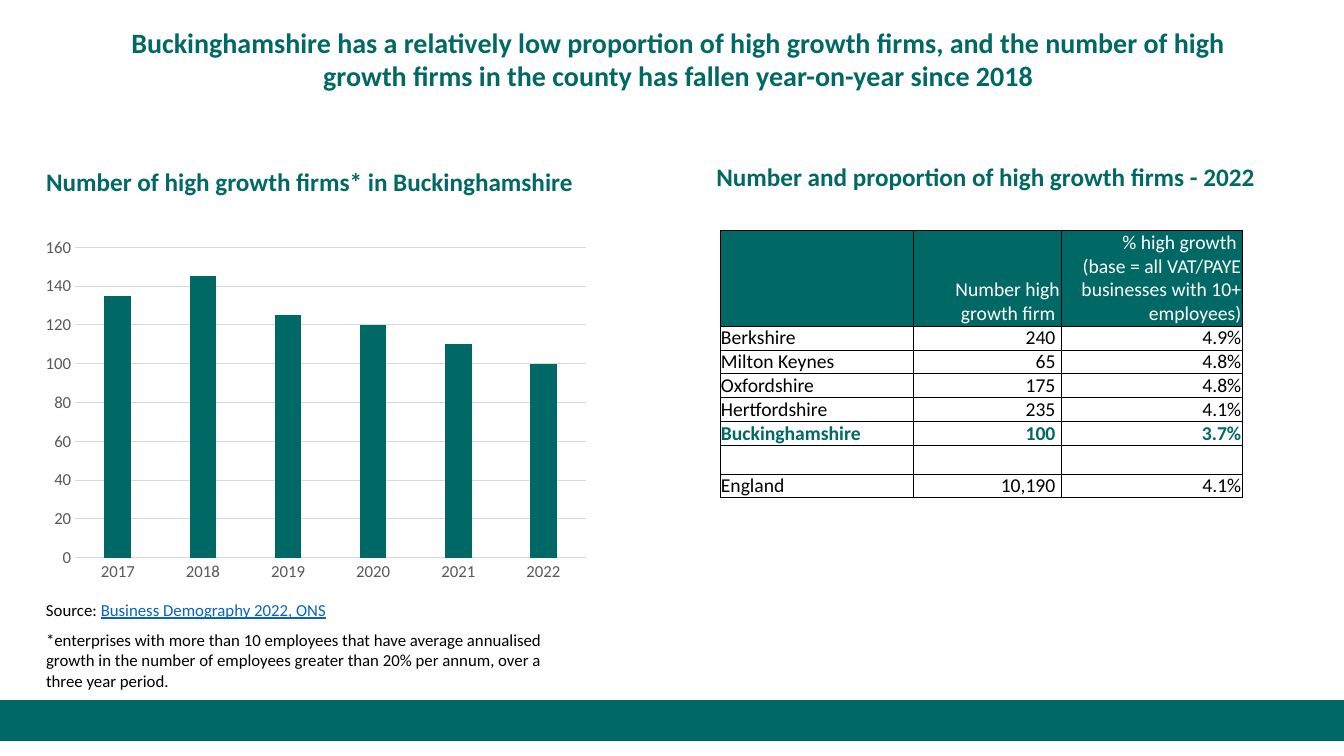
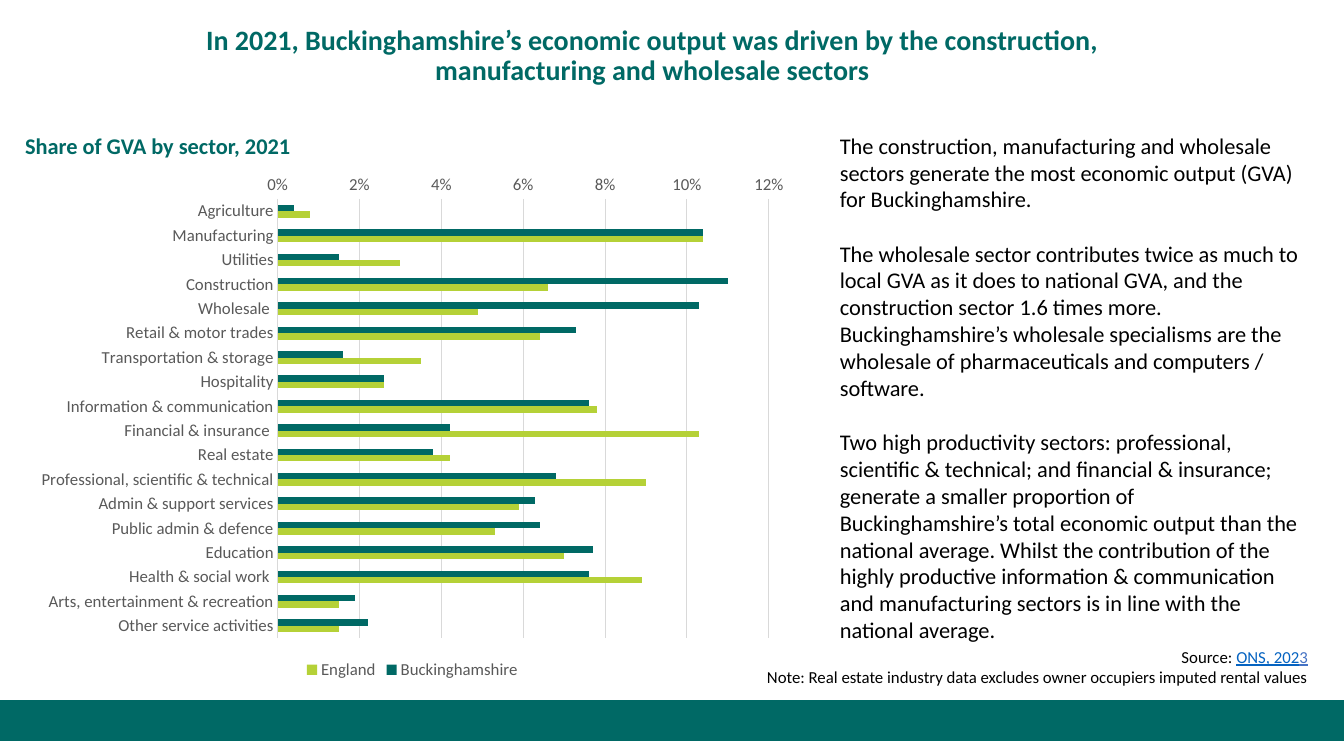
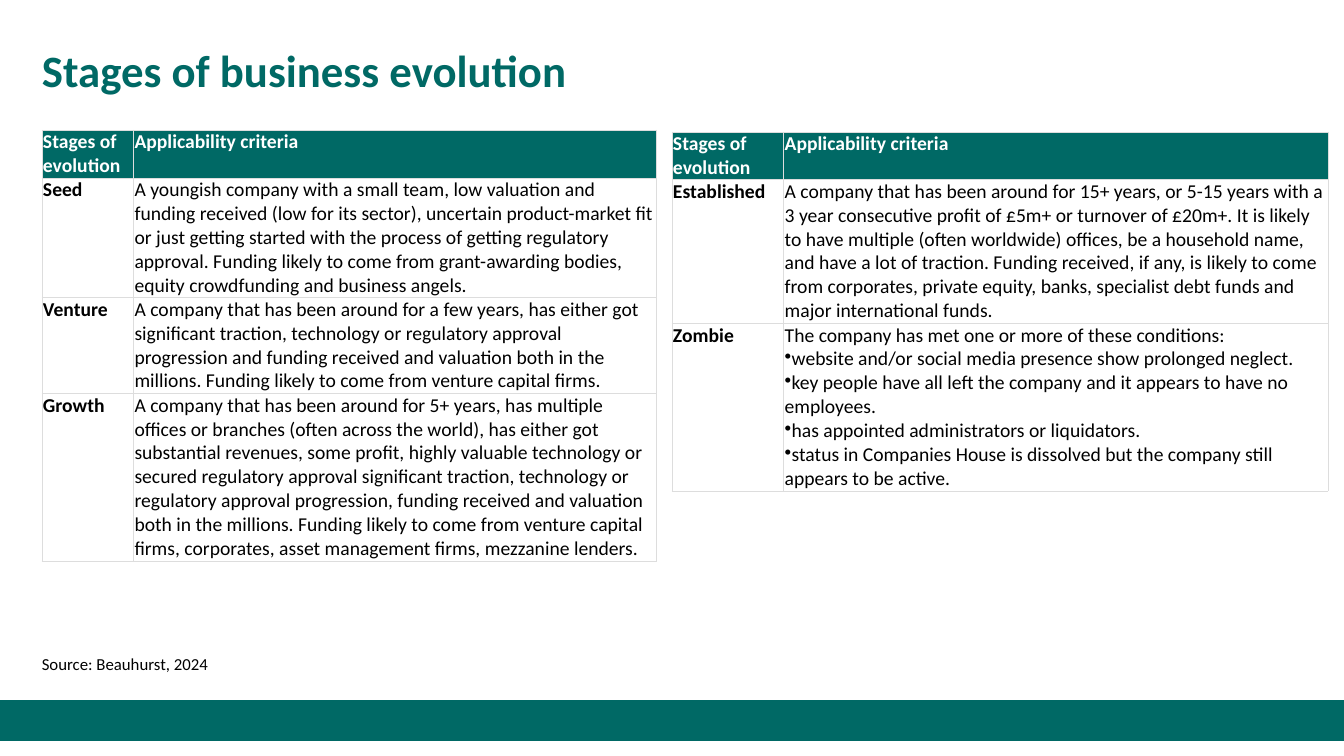
from lxml import etree
from pptx import Presentation
from pptx.chart.data import CategoryChartData
from pptx.dml.color import RGBColor
from pptx.enum.chart import XL_CHART_TYPE as ChartType, XL_LEGEND_POSITION as LegendSpot, XL_TICK_MARK as Tick
from pptx.enum.shapes import MSO_SHAPE as Preset
from pptx.enum.text import MSO_ANCHOR as Anchor, MSO_AUTO_SIZE as AutoSize, PP_ALIGN as Align
from pptx.oxml.ns import qn
from pptx.util import Inches, Pt

COLORS = {
    "teal": "006965",
    "lime": "B5D137",
    "black": "000000",
    "white": "FFFFFF",
    "gray": "595959",
    "rule": "D9D9D9",
    "edge": "DDDDDD",
    "link": "0563C1",
    "blue": "4472C4",
}
COLUMNS, ROWS = 160, 90
LINE_ROWS = 2.85
BULLET = "•"


def rgb(name):
    return RGBColor.from_string(COLORS[name])


class Report:
    font_name = "Calibri"

    def __init__(self):
        self.deck = Presentation()
        self.deck.slide_width, self.deck.slide_height = Inches(13.333), Inches(7.5)
        self.slide = None

    def across(self, columns):
        return round(self.deck.slide_width * columns / COLUMNS)

    def down(self, rows):
        return round(self.deck.slide_height * rows / ROWS)

    def place(self, left, top, width, height):
        return self.across(left), self.down(top), self.across(width), self.down(height)

    def style(self, font, size, color, bold=False):
        font.name, font.size, font.bold = self.font_name, Pt(size), bold
        font.color.rgb = rgb(color)

    def band(self):
        band = self.slide.shapes.add_shape(Preset.RECTANGLE, *self.place(0, 83.4, COLUMNS, 4.8))
        band.shadow.inherit = False
        band.fill.solid()
        band.fill.fore_color.rgb = band.line.color.rgb = rgb("teal")
        band.line.width = Pt(1)
        self.deck.slide_master.shapes.element.append(band.element)

    def page(self, title, at, size=20, align=Align.CENTER, spacing=0.9):
        first = self.slide is None
        self.slide = self.deck.slides.add_slide(self.deck.slide_layouts.get_by_name("Title Only"))
        if first:
            self.band()
        box = self.slide.shapes.title
        box.left, box.top, box.width, box.height = self.place(*at)
        self.fill(box.text_frame, [title], size, "teal", True, align, Anchor.MIDDLE, spacing)

    def fill(self, frame, paras, size, color="black", bold=False, align=Align.LEFT,
             anchor=Anchor.TOP, spacing=1.0, gap=0):
        frame.word_wrap, frame.auto_size = True, AutoSize.NONE
        frame.vertical_anchor = anchor
        self.add_paras(frame, paras, size, color, bold, align, spacing, gap)

    def add_paras(self, frame, paras, size, color, bold, align, spacing=1.0, gap=0):
        for index, spans in enumerate(paras):
            para = frame.add_paragraph() if index else frame.paragraphs[0]
            para.alignment, para.line_spacing = align, spacing
            para.space_before = Pt(gap if index else 0)
            spans = [spans] if isinstance(spans, str) else spans
            if spans[0] == BULLET:
                spans = spans[1:]
                properties = para._p.get_or_add_pPr()
                properties.set("marL", "0")
                properties.set("indent", "0")
                etree.SubElement(properties, qn("a:buChar"), char=BULLET)
            self.style(para.font, size, color, bold)
            for span in spans:
                run = para.add_run()
                if isinstance(span, str):
                    run.text = span
                else:
                    run.text, span_color = span
                    run.font.color.rgb = rgb(span_color)
                    run.font.underline = True

    def text(self, at, paras, size=12, **options):
        box = self.slide.shapes.add_textbox(*self.place(*at))
        self.fill(box.text_frame, paras, size, **options)

    def heading(self, at, words, size=18, **options):
        self.text(at, [words], size, color="teal", bold=True, **options)

    def border(self, cell, color, width):
        properties = cell._tc.get_or_add_tcPr()
        for index, side in enumerate(("lnL", "lnR", "lnT", "lnB")):
            line = etree.Element(qn(f"a:{side}"), w=str(Pt(width)))
            paint = etree.SubElement(line, qn("a:solidFill"))
            etree.SubElement(paint, qn("a:srgbClr"), val=COLORS[color])
            properties.insert(index, line)

    def table(self, left, top, widths, lines, rows, edge, edge_width, look):
        at = self.place(left, top, sum(widths), sum(lines) * LINE_ROWS)
        table = self.slide.shapes.add_table(len(rows), len(widths), *at).table
        table.horz_banding = False
        table.first_row = look(0, 0, rows[0])["bold"]
        for column, width in zip(table.columns, widths):
            column.width = self.across(width)
        for row, count in zip(table.rows, lines):
            row.height = self.down(count * LINE_ROWS)
        for y, values in enumerate(rows):
            for x, value in enumerate(values):
                cell = table.cell(y, x)
                options = look(y, x, values)
                cell.vertical_anchor = options.pop("anchor")
                cell.margin_left = cell.margin_right = Inches(0.01)
                cell.margin_top = cell.margin_bottom = 0
                cell.fill.solid()
                cell.fill.fore_color.rgb = rgb("white" if y else "teal")
                self.border(cell, edge, edge_width)
                paras = [value] if isinstance(value, str) else value
                self.add_paras(cell.text_frame, paras, 14, **options)

    def chart(self, at, kind, categories, series, top, step, number_format, gap, overlap):
        data = CategoryChartData(number_format=number_format)
        data.categories = categories
        for name, values, _ in series:
            data.add_series(name, values)
        chart = self.slide.shapes.add_chart(kind, *self.place(*at), data).chart
        chart.has_title = False
        self.style(chart.font, 12, "gray")
        plot = chart.plots[0]
        plot.gap_width, plot.overlap, plot.vary_by_categories = gap, overlap, False
        for bars, (_, _, color) in zip(plot.series, series):
            bars.format.fill.solid()
            bars.format.fill.fore_color.rgb = rgb(color)
        category, value = chart.category_axis, chart.value_axis
        for axis in (category, value):
            axis.major_tick_mark = axis.minor_tick_mark = Tick.NONE
            self.style(axis.tick_labels.font, 12, "gray")
        value.has_major_gridlines = True
        for line in (category.format.line, value.major_gridlines.format.line):
            line.color.rgb, line.width = rgb("rule"), Pt(0.75)
        category.reverse_order = kind == ChartType.BAR_CLUSTERED
        value.format.line.fill.background()
        value.minimum_scale, value.maximum_scale, value.major_unit = 0, top, step
        value.tick_labels.number_format = number_format
        value.tick_labels.number_format_is_linked = False
        chart.has_legend = len(series) > 1
        if chart.has_legend:
            chart.legend.position = LegendSpot.BOTTOM
            chart.legend.include_in_layout = False
            self.style(chart.legend.font, 12, "gray")


def county_look(y, x, values):
    ours = values[0] == "Buckinghamshire"
    return {
        "color": "teal" if ours else "black" if y else "white",
        "bold": ours,
        "align": Align.RIGHT if x else Align.LEFT,
        "anchor": Anchor.BOTTOM,
    }


def stage_look(y, x, values):
    return {
        "color": "black" if y else "white",
        "bold": y == 0 or x == 0,
        "align": Align.LEFT,
        "anchor": Anchor.TOP,
    }


def growth_page(report):
    report.page(
        "Buckinghamshire has a relatively low proportion of high growth firms, and the number of high "
        "growth firms in the county has fallen year-on-year since 2018",
        (13.3, 2.4, 134.9, 9.2), spacing=1.0)
    report.heading((4.3, 18.5, 71.8, 6.7), "Number of high growth firms* in Buckinghamshire",
                   anchor=Anchor.MIDDLE, spacing=0.9)
    report.heading((84.1, 15.8, 71.8, 10.9), "Number and proportion of high growth firms - 2022",
                   anchor=Anchor.MIDDLE, spacing=0.9)
    report.chart((4.1, 27.4, 67, 42.7), ChartType.COLUMN_CLUSTERED,
                 [str(year) for year in range(2017, 2023)],
                 [("Series 1", (135, 145, 125, 120, 110, 100), "teal")],
                 160, 20, "General", 219, -27)
    rows = [
        ("", "Number high growth firm ",
         ["% high growth ", "(base = all VAT/PAYE businesses with 10+ employees)"]),
        ("Berkshire", "240 ", "4.9%"),
        ("Milton Keynes", "65 ", "4.8%"),
        ("Oxfordshire", "175 ", "4.8%"),
        ("Hertfordshire", "235 ", "4.1%"),
        ("Buckinghamshire", "100 ", "3.7%"),
        ("", "", ""),
        ("England", "10,190 ", "4.1%"),
    ]
    report.table(85.7, 27.4, (23, 17.6, 21.6), [4] + [1] * 7, rows, "black", 0.5, county_look)
    report.text((4.3, 70.8, 42.2, 3.6), [["Source: ", ("Business Demography 2022, ONS", "link")]])
    report.text((4.3, 74.4, 63, 8.5), [
        "*enterprises with more than 10 employees that have average annualised growth in the number "
        "of employees greater than 20% per annum, over a three year period."])


def sector_page(report):
    report.page(
        "In 2021, Buckinghamshire’s economic output was driven by the construction, manufacturing "
        "and wholesale sectors", (15.5, 2.8, 124.3, 7.9))
    report.heading((1.8, 15.1, 45.7, 4.4), "Share of GVA by sector, 2021", 16)
    sectors = [
        ("Agriculture", 0.004, 0.008),
        ("Manufacturing", 0.104, 0.104),
        ("Utilities", 0.015, 0.03),
        ("Construction", 0.11, 0.066),
        ("Wholesale ", 0.103, 0.049),
        ("Retail & motor trades", 0.073, 0.064),
        ("Transportation & storage", 0.016, 0.035),
        ("Hospitality", 0.026, 0.026),
        ("Information & communication", 0.076, 0.078),
        ("Financial & insurance ", 0.042, 0.103),
        ("Real estate", 0.038, 0.042),
        ("Professional, scientific & technical", 0.068, 0.09),
        ("Admin & support services", 0.063, 0.059),
        ("Public admin & defence", 0.064, 0.053),
        ("Education", 0.077, 0.07),
        ("Health & social work ", 0.076, 0.089),
        ("Arts, entertainment & recreation", 0.019, 0.015),
        ("Other service activities", 0.022, 0.015),
    ]
    names, county, country = zip(*sectors)
    report.chart((3.1, 19.6, 92, 61.8), ChartType.BAR_CLUSTERED, names,
                 [("Buckinghamshire", county, "teal"), ("England", country, "lime")],
                 0.12, 0.02, "0%", 182, 0)
    report.text((98.8, 15.1, 57.7, 62.6), [
        "The construction, manufacturing and wholesale sectors generate the most economic output "
        "(GVA) for Buckinghamshire.",
        "The wholesale sector contributes twice as much to local GVA as it does to national GVA, and "
        "the construction sector 1.6 times more. Buckinghamshire’s wholesale specialisms are the "
        "wholesale of pharmaceuticals and computers / software.",
        "Two high productivity sectors: professional, scientific & technical; and financial & "
        "insurance; generate a smaller proportion of Buckinghamshire’s total economic output than "
        "the national average. Whilst the contribution of the highly productive information & "
        "communication and manufacturing sectors is in line with the national average.",
    ], 16, gap=19.5)
    report.text((67.6, 76.4, 89.3, 6), [
        ["Source: ", ("ONS, 202", "link"), ("3", "blue")],
        "Note: Real estate industry data excludes owner occupiers imputed rental values",
    ], align=Align.RIGHT)


def stages_page(report):
    report.page("Stages of business evolution", (3.8, 0, 138, 17.4), 32, Align.LEFT)
    header = ("Stages of evolution", "Applicability criteria")
    early = [
        header,
        ("Seed",
         "A youngish company with a small team, low valuation and funding received (low for its "
         "sector), uncertain product-market fit or just getting started with the process of getting "
         "regulatory approval. Funding likely to come from grant-awarding bodies, equity "
         "crowdfunding and business angels."),
        ("Venture",
         "A company that has been around for a few years, has either got significant traction, "
         "technology or regulatory approval progression and funding received and valuation both in "
         "the millions. Funding likely to come from venture capital firms."),
        ("Growth",
         "A company that has been around for 5+ years, has multiple offices or branches (often "
         "across the world), has either got substantial revenues, some profit, highly valuable "
         "technology or secured regulatory approval significant traction, technology or regulatory "
         "approval progression, funding received and valuation both in the millions. Funding likely "
         "to come from venture capital firms, corporates, asset management firms, mezzanine lenders."),
    ]
    late = [
        header,
        ("Established",
         "A company that has been around for 15+ years, or 5-15 years with a 3 year consecutive "
         "profit of £5m+ or turnover of £20m+. It is likely to have multiple (often worldwide) "
         "offices, be a household name, and have a lot of traction. Funding received, if any, is "
         "likely to come from corporates, private equity, banks, specialist debt funds and major "
         "international funds."),
        ("Zombie", [
            "The company has met one or more of these conditions:",
            [BULLET, "website and/or social media presence show prolonged neglect."],
            [BULLET, "key people have all left the company and it appears to have no employees."],
            [BULLET, "has appointed administrators or liquidators."],
            [BULLET, "status in Companies House is dissolved but the company still appears to be "
                     "active."],
        ]),
    ]
    report.table(5, 15.5, (10.9, 62.3), (2, 5, 4, 7), early, "edge", 0.6, stage_look)
    report.table(80, 15.7, (13.3, 64.8), (2, 6, 7), late, "edge", 0.6, stage_look)
    report.text((3.8, 77.2, 34.8, 3.6), ["Source: Beauhurst, 2024"])


def main():
    report = Report()
    for build in (growth_page, sector_page, stages_page):
        build(report)
    report.deck.save("out.pptx")


if __name__ == "__main__":
    main()
